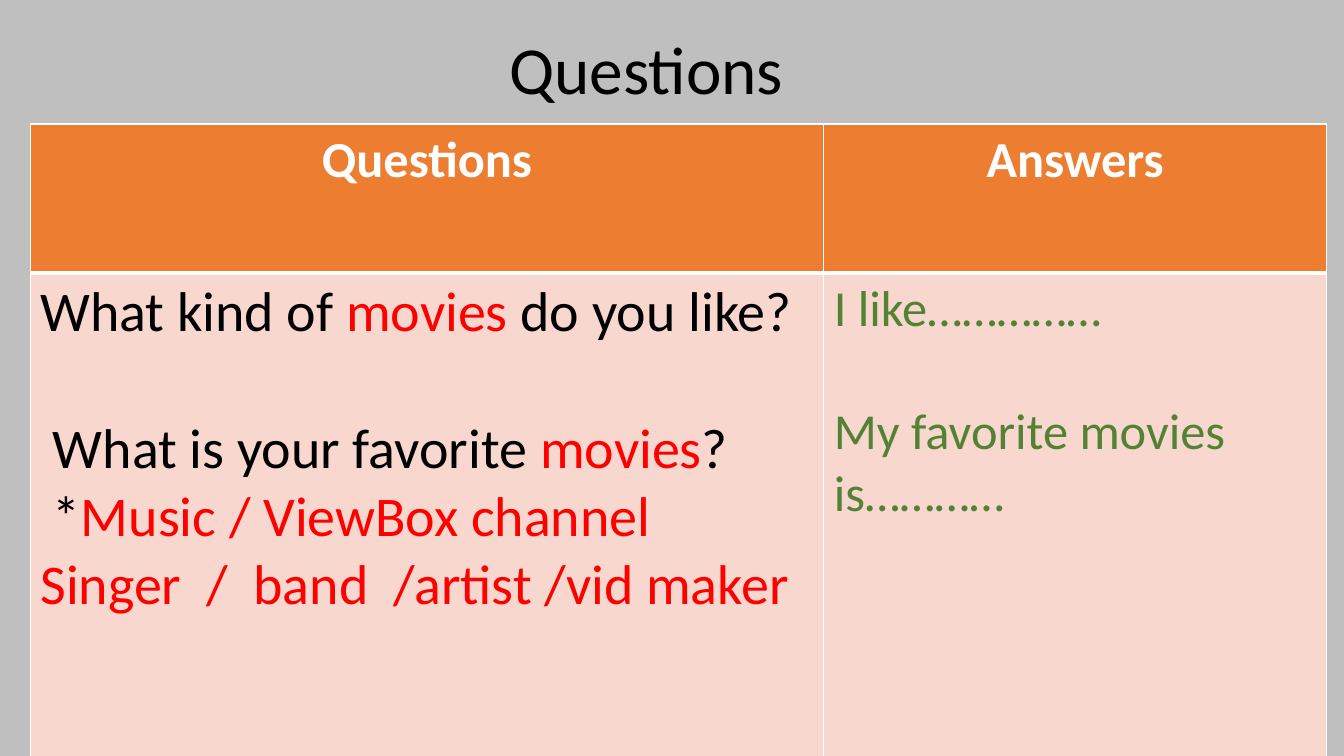
import pptx
import pptx.util
import pptx.dml.color
import pptx.enum.text
import pptx.oxml.ns
from dataclasses import dataclass
from lxml import etree

Inches, Pt = pptx.util.Inches, pptx.util.Pt
CENTER = pptx.enum.text.PP_ALIGN.CENTER


@dataclass(frozen=True)
class Theme:
    font: str = "Calibri"
    background: str = "BFBFBF"
    header_fill: str = "ED7D31"
    body_fill: str = "F8D7CE"
    white: str = "FFFFFF"
    black: str = "000000"
    red: str = "FF0000"
    green: str = "548235"
    title_size: int = 48
    question_size: int = 40
    small_size: int = 36
    line_height: float = 1.22
    thin: int = 1
    thick: int = 3


THEME = Theme()

# Each paragraph is (runs, blank line follows); each run is (text, colour).
TITLE = "Questions"
HEADERS = ["Questions", "Answers"]
QUESTIONS = [
    ([("What kind of ", THEME.black), ("movies ", THEME.red),
      ("do you like?", THEME.black)], True),
    ([(" What is your favorite ", THEME.black), ("movies", THEME.red),
      ("?", THEME.black)], False),
    ([(" *", THEME.black), ("Music / ViewBox channel", THEME.red)], False),
    ([("Singer  /  band  /artist /vid maker", THEME.red)], False),
]
ANSWERS = [
    ([("I like……………", THEME.green)], True),
    ([("My favorite movies is…………", THEME.green)], False),
]
TITLE_BOX = (0.66, 0, 11.5, 1.45)
TABLE_CORNER = (0.3, 1.23)
COLUMN_WIDTHS = [7.87, 4.99]
ROW_HEIGHTS = [1.48, 4.8]


def rgb(colour):
    return pptx.dml.color.RGBColor.from_string(colour)


def write(frame, paragraphs, size, align=None, bold=False):
    """Fill a text frame with paragraphs of coloured runs."""
    for index, (runs, gap_after) in enumerate(paragraphs):
        paragraph = frame.paragraphs[0] if index == 0 else frame.add_paragraph()
        paragraph.alignment = align
        if gap_after:
            paragraph.space_after = Pt(size * THEME.line_height)
        for text, colour in runs:
            run = paragraph.add_run()
            run.text = text
            run.font.name = THEME.font
            run.font.size = Pt(size)
            run.font.bold = bold
            run.font.color.rgb = rgb(colour)


def style_cell(cell, fill, top, bottom):
    """Draw white borders, then the fill, in the order the schema needs."""
    properties = cell._tc.get_or_add_tcPr()
    qn = pptx.oxml.ns.qn
    widths = {"L": THEME.thin, "R": THEME.thin, "T": top, "B": bottom}
    for side, width in widths.items():
        line = etree.SubElement(properties, qn(f"a:ln{side}"), w=str(Pt(width)))
        solid = etree.SubElement(line, qn("a:solidFill"))
        etree.SubElement(solid, qn("a:srgbClr"), val=THEME.white)
    cell.fill.solid()
    cell.fill.fore_color.rgb = rgb(fill)


def add_title(slide):
    frame = slide.shapes.add_textbox(*map(Inches, TITLE_BOX)).text_frame
    frame.word_wrap = True
    frame.vertical_anchor = pptx.enum.text.MSO_ANCHOR.MIDDLE
    write(frame, [([(TITLE, THEME.black)], False)], THEME.title_size, CENTER)
    frame.paragraphs[0].line_spacing = 0.9


def add_question_table(slide):
    extent = (sum(COLUMN_WIDTHS), sum(ROW_HEIGHTS))
    table = slide.shapes.add_table(
        len(ROW_HEIGHTS), len(COLUMN_WIDTHS),
        *map(Inches, TABLE_CORNER + extent)).table
    for column, width in zip(table.columns, COLUMN_WIDTHS):
        column.width = Inches(width)
    for row, height in zip(table.rows, ROW_HEIGHTS):
        row.height = Inches(height)

    bodies = [(QUESTIONS, THEME.question_size), (ANSWERS, THEME.small_size)]
    for index, (heading, (body, size)) in enumerate(zip(HEADERS, bodies)):
        header_cell, body_cell = table.cell(0, index), table.cell(1, index)
        style_cell(header_cell, THEME.header_fill, THEME.thin, THEME.thick)
        style_cell(body_cell, THEME.body_fill, THEME.thick, THEME.thin)
        write(header_cell.text_frame, [([(heading, THEME.white)], False)],
              THEME.small_size, CENTER, bold=True)
        write(body_cell.text_frame, body, size)


def main():
    deck = pptx.Presentation()
    deck.slide_width, deck.slide_height = Inches(13.33), Inches(7.5)
    slide = deck.slides.add_slide(deck.slide_layouts[6])
    slide.background.fill.solid()
    slide.background.fill.fore_color.rgb = rgb(THEME.background)
    add_title(slide)
    add_question_table(slide)
    deck.save("out.pptx")


if __name__ == "__main__":
    main()
